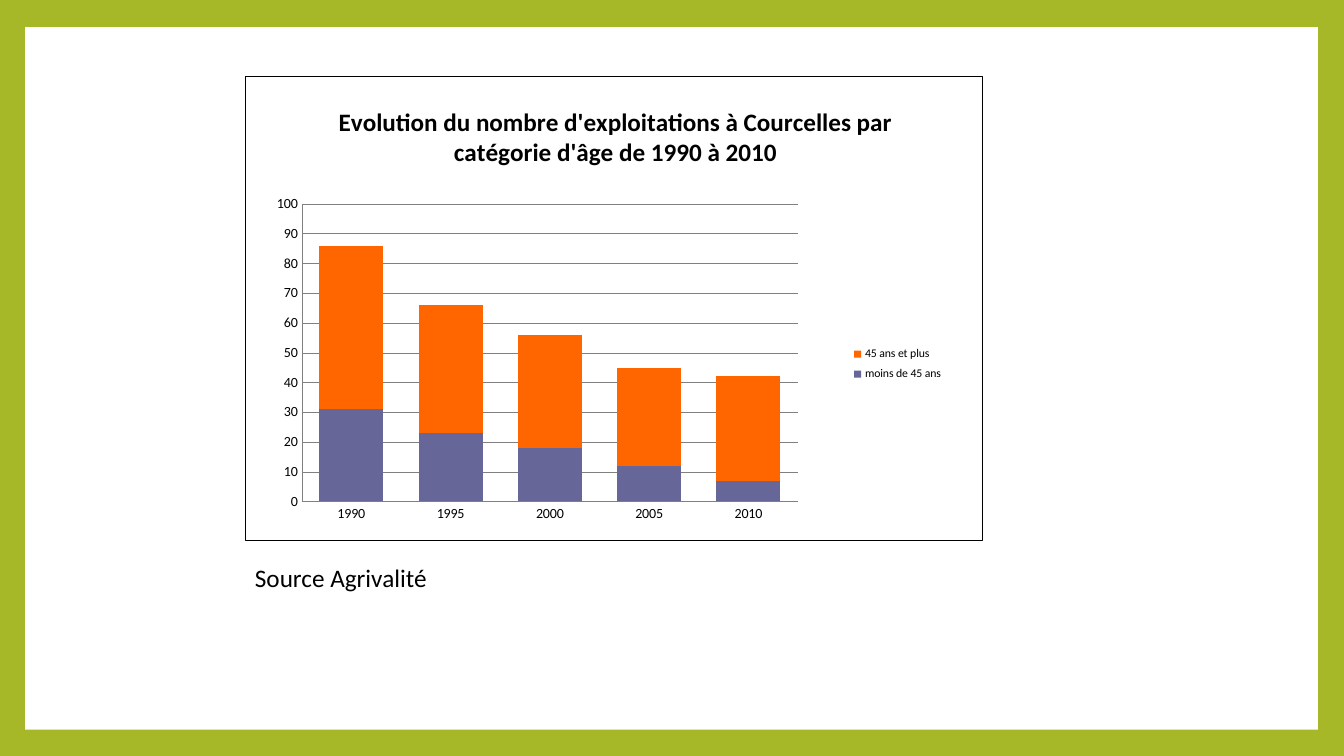
from pptx import Presentation
from pptx.chart.data import CategoryChartData as ChartData
from pptx.dml.color import RGBColor as RGB
from pptx.enum.chart import XL_CHART_TYPE as Kind, XL_LEGEND_POSITION as Place, XL_TICK_MARK as Tick
from pptx.enum.shapes import MSO_SHAPE as Shape
from pptx.oxml import parse_xml
from pptx.oxml.ns import nsdecls
from pptx.util import Inches, Pt

GREEN, WHITE, BLACK, GRAY = "A6B727", "FFFFFF", "000000", "808080"
TITLE = "Evolution du nombre d'exploitations à Courcelles par catégorie d'âge de 1990 à 2010"
YEARS = ["1990", "1995", "2000", "2005", "2010"]
AGES = [
    ("moins de 45 ans", [31, 23, 18, 12, 7], "666699"),
    ("45 ans et plus", [55, 43, 38, 33, 35], "FF6600"),
]


def paint(fill, color):
    fill.solid()
    fill.fore_color.rgb = RGB.from_string(color)


def style(font, size, bold=False):
    font.name = "Calibri"
    font.size = Pt(size)
    font.bold = bold
    font.color.rgb = RGB.from_string(BLACK)


def rule(line, color, width):
    paint(line.fill, color)
    line.width = Pt(width)


def add_panel(slide):
    panel = slide.shapes.add_shape(
        Shape.RECTANGLE, Inches(0.25), Inches(0.27), Inches(12.82), Inches(6.97))
    panel.shadow.inherit = False
    paint(panel.fill, WHITE)
    panel.line.fill.background()


def add_text(slide, text, left, top, width, height):
    box = slide.shapes.add_textbox(Inches(left), Inches(top), Inches(width), Inches(height))
    box.text_frame.word_wrap = True
    box.text_frame.text = text
    style(box.text_frame.paragraphs[0].runs[0].font, 18)


def area(color, border=None):
    fill = f'<a:solidFill><a:srgbClr val="{color}"/></a:solidFill>'
    edge = "<a:noFill/>"
    if border:
        edge = f'<a:solidFill><a:srgbClr val="{border}"/></a:solidFill>'
    return parse_xml(f'<c:spPr {nsdecls("c", "a")}>{fill}<a:ln w="12700">{edge}</a:ln></c:spPr>')


def arrange(node, index, inner=False, **spots):
    for old in node.xpath("c:layout"):
        node.remove(old)
    target = '<c:layoutTarget val="inner"/>' if inner else ""
    modes = "".join(f'<c:{key}Mode val="edge"/>' for key in spots if key in "xy")
    sizes = "".join(f'<c:{key} val="{value}"/>' for key, value in spots.items())
    node.insert(index, parse_xml(
        f'<c:layout {nsdecls("c")}><c:manualLayout>{target}{modes}{sizes}'
        '</c:manualLayout></c:layout>'))


def style_axis(axis):
    axis.major_tick_mark = axis.minor_tick_mark = Tick.NONE
    style(axis.tick_labels.font, 10)
    rule(axis.format.line, GRAY, 0.25)


def add_chart(slide):
    data = ChartData()
    data.categories = YEARS
    for name, values, _ in AGES:
        data.add_series(name, values)
    chart = slide.shapes.add_chart(
        Kind.COLUMN_STACKED, Inches(2.43), Inches(0.75), Inches(7.32), Inches(4.62), data).chart
    style(chart.font, 10)

    chart.has_title = True
    title = chart.chart_title.text_frame
    title.text = TITLE
    style(title.paragraphs[0].runs[0].font, 18, True)

    chart.has_legend = True
    chart.legend.position = Place.RIGHT
    chart.legend.include_in_layout = False
    style(chart.legend.font, 8.4)

    plot = chart.plots[0]
    plot.gap_width = 55
    plot.overlap = 100
    plot.vary_by_categories = False
    for series, (_, _, color) in zip(plot.series, AGES):
        paint(series.format.fill, color)

    style_axis(chart.category_axis)
    scale = chart.value_axis
    style_axis(scale)
    scale.minimum_scale, scale.maximum_scale, scale.major_unit = 0, 100, 10
    rule(scale.major_gridlines.format.line, GRAY, 0.25)

    root = chart.element
    frame = root.xpath("c:chart")[0]
    frame.addnext(area(WHITE, BLACK))
    field = frame.xpath("c:plotArea")[0]
    field.append(area(WHITE))
    arrange(field, 0, True, x=0.076, y=0.275, w=0.674, h=0.641)
    arrange(frame.xpath("c:title")[0], 1, x=0.12, y=0.05)
    arrange(frame.xpath("c:legend")[0], 1, x=0.81, y=0.57, w=0.15, h=0.1)


def main():
    deck = Presentation()
    deck.slide_width, deck.slide_height = Inches(13.33), Inches(7.5)
    slide = deck.slides.add_slide(deck.slide_layouts[6])
    paint(slide.background.fill, GREEN)
    add_panel(slide)
    add_chart(slide)
    add_text(slide, "Source Agrivalité", 2.43, 5.53, 3.51, 0.4)
    deck.save("out.pptx")


if __name__ == "__main__":
    main()
